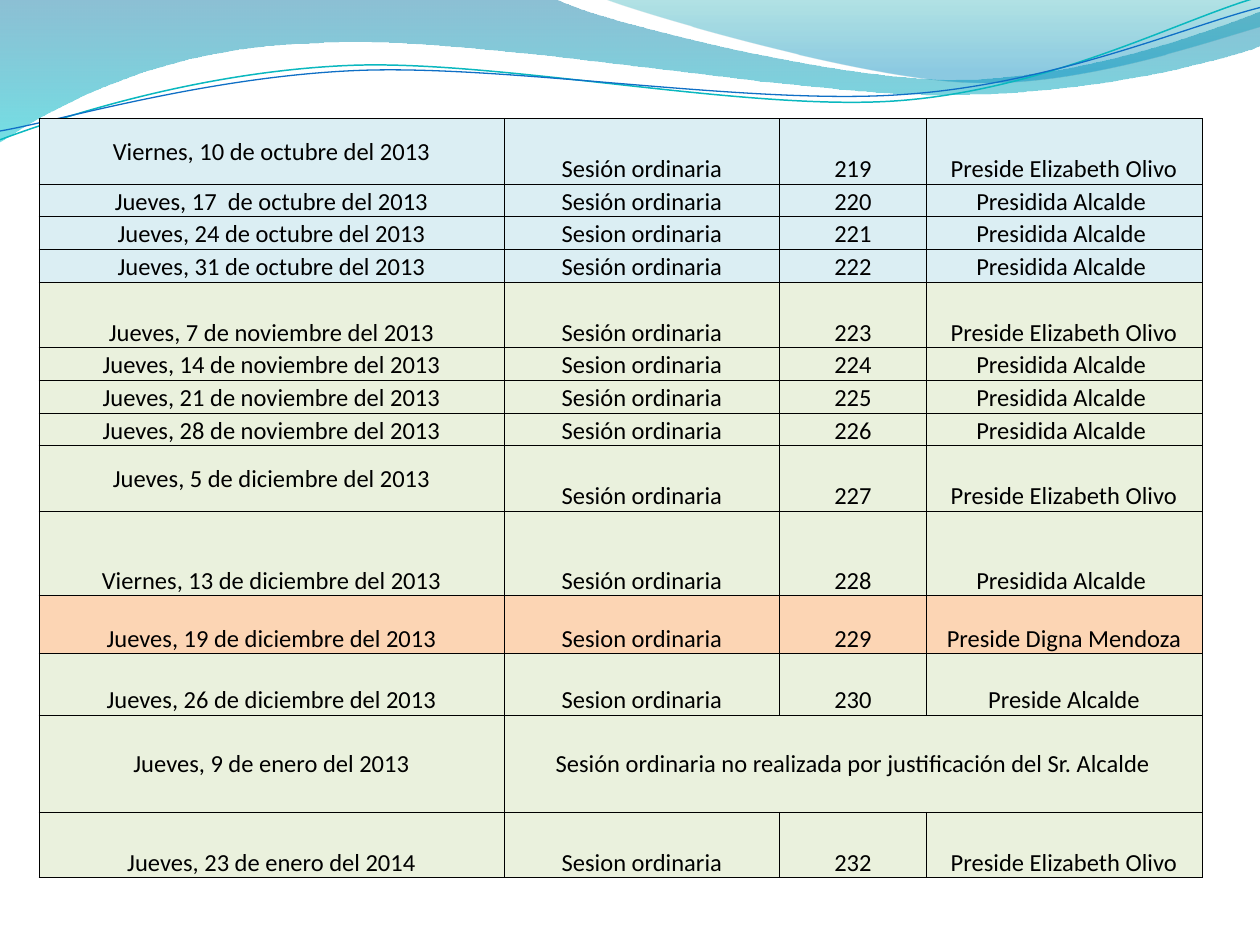
"""Build the slide listing council sessions from October 2013 to January 2014."""
import dataclasses

import pptx
import pptx.dml.color
import pptx.enum.text
import pptx.oxml
import pptx.oxml.ns
import pptx.util

Inches = pptx.util.Inches
ANCHOR = pptx.enum.text.MSO_ANCHOR


@dataclasses.dataclass(frozen=True)
class Theme:
    """Colours, font and sizes of the slide."""

    font: str = "Calibri"
    text_size: int = 14
    border_width: float = 0.5
    ink: str = "000000"
    october: str = "DBEEF3"
    later: str = "EAF1DD"
    highlight: str = "FCD5B4"
    wide_wave: tuple = ((0, "0074A1", 45), (1, "00C6CF", 55))
    right_wave: tuple = ((0, "00A1A9", 30), (0.8, "008BBF", 45))
    teal_line: tuple = ("0AB8BF", 0.85)
    blue_line: tuple = ("0F6FC6", 0.75)


THEME = Theme()

WIDE_WAVE = [
    (0, 0), (4.4, -0.01), (4.76, 0.17, 6.64, 0.63, 7.58, 0.63),
    (8.53, 0.63, 9.58, 0.26, 10, 0.09), (10.01, 0.36),
    (9.83, 0.44, 8.7, 0.76, 7.46, 0.75), (6.22, 0.75, 3.82, 0.28, 2.57, 0.34),
    (1.29, 0.36, 0.46, 0.83, -0.01, 1.13),
]
RIGHT_WAVE = [
    (4.79, -0.01), (5.09, 0.11, 6.82, 0.62, 7.69, 0.65),
    (8.56, 0.69, 9.61, 0.32, 10, 0.21), (10, 0),
]
TEAL_CURVE = [
    (0, 1.11), (0.48, 0.93, 1.58, 0.57, 2.77, 0.52),
    (3.95, 0.47, 5.93, 0.89, 7.13, 0.8), (8.33, 0.71, 9.38, 0.15, 9.98, -0.02),
]
BLUE_CURVE = [
    (0, 1.04), (0.47, 0.96, 1.64, 0.61, 2.83, 0.56),
    (4.03, 0.51, 5.97, 0.84, 7.17, 0.75), (8.36, 0.67, 9.41, 0.21, 10, 0.06),
]

COLUMN_WIDTHS = [3.69, 2.19, 1.16, 2.19]
ORDINARY, ORDINARY_PLAIN = "Sesión ordinaria", "Sesion ordinaria"
OLIVO, MAYOR = "Preside Elizabeth Olivo", "Presidida Alcalde "
SESSIONS = [
    (0.52, "Viernes, 10 de octubre del 2013", ORDINARY, "219", OLIVO),
    (0.26, "Jueves, 17  de octubre del 2013", ORDINARY, "220", MAYOR),
    (0.26, "Jueves, 24 de octubre del 2013", ORDINARY_PLAIN, "221", MAYOR),
    (0.26, "Jueves, 31 de octubre del 2013", ORDINARY, "222", MAYOR),
    (0.52, "Jueves, 7 de noviembre del 2013", ORDINARY, "223", OLIVO),
    (0.26, "Jueves, 14 de noviembre del 2013", ORDINARY_PLAIN, "224", MAYOR),
    (0.26, "Jueves, 21 de noviembre del 2013", ORDINARY, "225", MAYOR),
    (0.26, "Jueves, 28 de noviembre del 2013", ORDINARY, "226", MAYOR),
    (0.52, "Jueves, 5 de diciembre del 2013", ORDINARY, "227", OLIVO),
    (0.67, "Viernes, 13 de diciembre del 2013", ORDINARY, "228", MAYOR),
    (0.46, "Jueves, 19 de diciembre del 2013", ORDINARY_PLAIN, "229", "Preside Digna Mendoza"),
    (0.49, "Jueves, 26 de diciembre del 2013", ORDINARY_PLAIN, "230", "Preside Alcalde"),
    (0.77, "Jueves, 9 de enero del 2013",
     "Sesión ordinaria no realizada por justificación del Sr. Alcalde"),
    (0.52, "Jueves, 23 de enero del 2014", ORDINARY_PLAIN, "232", OLIVO),
]
MIDDLE_CELLS = {(0, 0), (8, 0), (12, 0), (12, 1)}


def rgb(value):
    """Return a colour from its hexadecimal text."""
    return pptx.dml.color.RGBColor.from_string(value)


def apply_format(target, values):
    """Set each named attribute of the target."""
    for name, value in values.items():
        setattr(target, name, value)


def add_curve(slide, segments, close):
    """Add a freeform in which pairs are lines and sextuples are Bézier curves."""
    points = [
        (Inches(x), Inches(y))
        for segment in segments
        for x, y in zip(segment[::2], segment[1::2])
    ]
    builder = slide.shapes.build_freeform(*points[0], scale=1.0)
    builder.add_line_segments(points[1:], close=close)
    curve = builder.convert_to_shape()
    curve.shadow.inherit = False
    steps = iter(curve.element.findall(".//" + pptx.oxml.ns.qn("a:lnTo")))
    for segment in segments[1:]:
        step = next(steps)
        if len(segment) == 6:
            step.tag = pptx.oxml.ns.qn("a:cubicBezTo")
            for control in (next(steps), next(steps)):
                step.append(control[0])
                control.getparent().remove(control)
    return curve


def add_wave(slide, segments, stops):
    """Add a closed wave with a translucent downward gradient."""
    wave = add_curve(slide, segments, close=True)
    wave.line.fill.background()
    wave.fill.gradient()
    wave.fill.gradient_angle = 270
    for stop, (position, colour, opacity) in zip(wave.fill.gradient_stops, stops):
        stop.position = position
        stop.color.rgb = rgb(colour)
    tag = pptx.oxml.ns.qn("a:srgbClr")
    for colour, (_, _, opacity) in zip(wave.element.spPr.iter(tag), stops):
        alpha = colour.makeelement(pptx.oxml.ns.qn("a:alpha"), {"val": str(opacity * 1000)})
        colour.append(alpha)


def add_wave_line(slide, segments, style):
    """Add an open, unfilled curve."""
    colour, width = style
    curve = add_curve(slide, segments, close=False)
    curve.fill.background()
    curve.line.color.rgb = rgb(colour)
    curve.line.width = pptx.util.Pt(width)


def add_borders(cell):
    """Outline the four sides of a table cell."""
    properties = cell._tc.get_or_add_tcPr()
    width = pptx.util.Pt(THEME.border_width)
    for side in ("lnL", "lnR", "lnT", "lnB"):
        properties.append(pptx.oxml.parse_xml(
            f'<a:{side} {pptx.oxml.ns.nsdecls("a")} w="{width}"><a:solidFill>'
            f'<a:srgbClr val="{THEME.ink}"/></a:solidFill></a:{side}>'
        ))


def format_cell(cell, colour, anchor):
    """Give a cell its borders, fill, insets and anchor."""
    add_borders(cell)
    cell.fill.solid()
    cell.fill.fore_color.rgb = rgb(colour)
    inset = Inches(0.01)
    apply_format(cell, {
        "margin_left": inset, "margin_right": inset, "margin_top": inset,
        "margin_bottom": 0, "vertical_anchor": anchor,
    })


def write_cell(cell, text):
    """Write centred text in a cell."""
    paragraph = cell.text_frame.paragraphs[0]
    paragraph.alignment = pptx.enum.text.PP_ALIGN.CENTER
    run = paragraph.add_run()
    run.text = text
    apply_format(run.font, {"name": THEME.font, "size": pptx.util.Pt(THEME.text_size)})
    run.font.color.rgb = rgb(THEME.ink)


def session_colour(date):
    """Choose the row colour from the date of the session."""
    if "19 de diciembre" in date:
        return THEME.highlight
    return THEME.october if "octubre" in date else THEME.later


def add_sessions(slide):
    """Add the table of sessions."""
    heights = [session[0] for session in SESSIONS]
    sessions = slide.shapes.add_table(
        len(SESSIONS), len(COLUMN_WIDTHS), Inches(0.31), Inches(0.94),
        Inches(sum(COLUMN_WIDTHS)), Inches(sum(heights)),
    ).table
    apply_format(sessions, {"first_row": False, "horz_banding": False})
    for column, width in zip(sessions.columns, COLUMN_WIDTHS):
        column.width = Inches(width)
    for row, (height, *texts) in enumerate(SESSIONS):
        sessions.rows[row].height = Inches(height)
        for column in range(len(COLUMN_WIDTHS)):
            anchor = ANCHOR.MIDDLE if (row, column) in MIDDLE_CELLS else ANCHOR.BOTTOM
            format_cell(sessions.cell(row, column), session_colour(texts[0]), anchor)
        for column, text in enumerate(texts):
            write_cell(sessions.cell(row, column), text)
        if len(texts) < len(COLUMN_WIDTHS):
            sessions.cell(row, 1).merge(sessions.cell(row, 3))


def main():
    """Build and save the presentation."""
    deck = pptx.Presentation()
    apply_format(deck, {"slide_width": Inches(10), "slide_height": Inches(7.5)})
    slide = deck.slides.add_slide(deck.slide_layouts[6])
    add_wave(slide, WIDE_WAVE, THEME.wide_wave)
    add_wave(slide, RIGHT_WAVE, THEME.right_wave)
    add_wave_line(slide, TEAL_CURVE, THEME.teal_line)
    add_wave_line(slide, BLUE_CURVE, THEME.blue_line)
    add_sessions(slide)
    deck.save("out.pptx")


if __name__ == "__main__":
    main()
